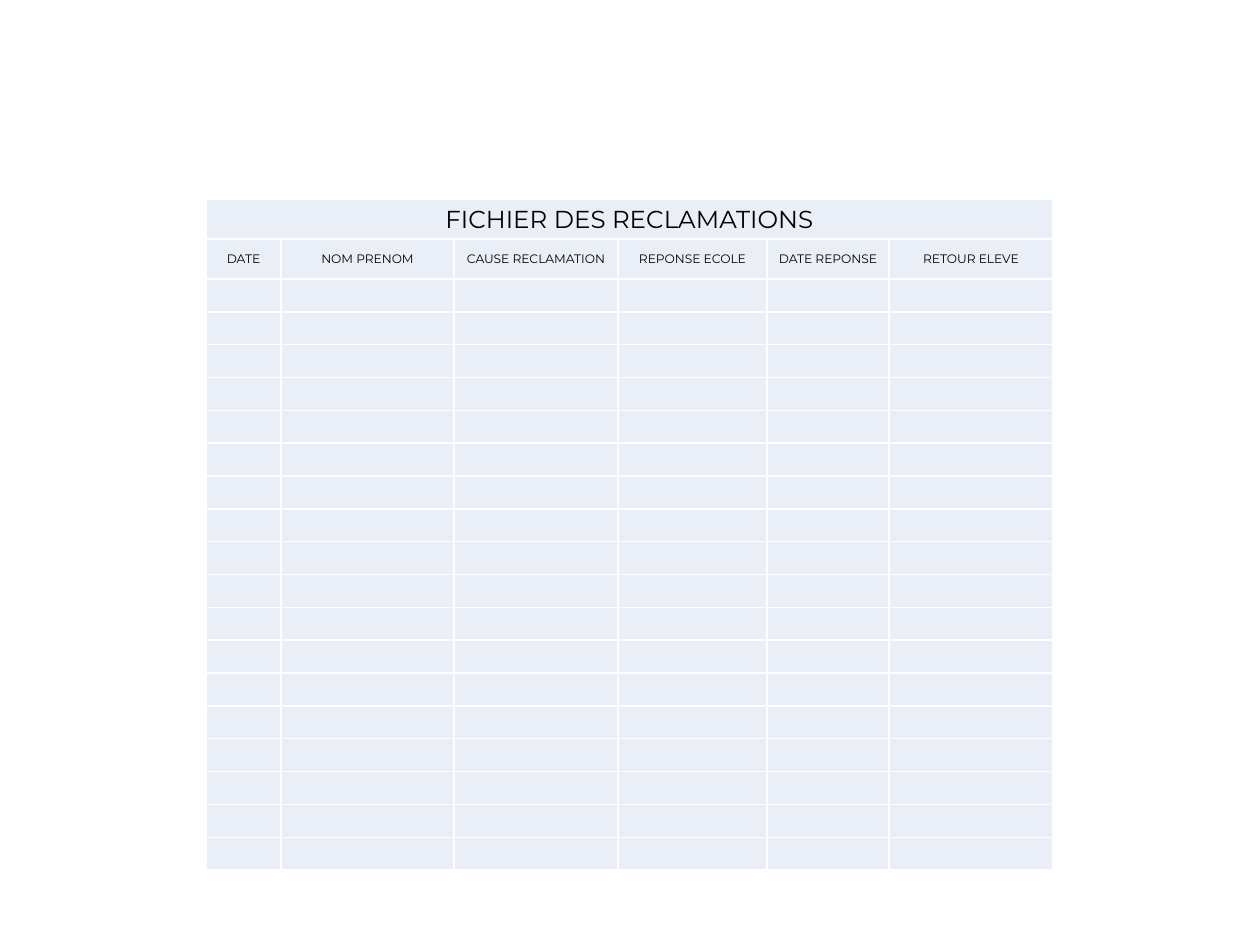
from lxml.etree import SubElement
from pptx import Presentation
from pptx.dml.color import RGBColor
from pptx.enum.text import MSO_ANCHOR, PP_ALIGN
from pptx.oxml.ns import qn
from pptx.util import Inches, Pt

SCALE = Inches(1) / 126
PALE_BLUE = RGBColor(0xEA, 0xEF, 0xF7)
WHITE = RGBColor(0xFF, 0xFF, 0xFF)
BLACK = RGBColor(0x00, 0x00, 0x00)

TITLE = "FICHIER DES RECLAMATIONS"
COLUMNS = [
    ("DATE", 75),
    ("NOM PRENOM", 173),
    ("CAUSE RECLAMATION", 164),
    ("REPONSE ECOLE", 149),
    ("DATE REPONSE", 122),
    ("RETOUR ELEVE", 164),
]
LEFT, TOP = 206, 199
HEAD_ROWS, HEAD_HEIGHT = 2, 40
BODY_ROWS, BODY_HEIGHT = 18, 592


def px(n):
    return round(n * SCALE)


def add_borders(cell):
    tc_pr = cell._tc.get_or_add_tcPr()
    for side in ("lnL", "lnR", "lnT", "lnB"):
        ln = SubElement(tc_pr, qn(f"a:{side}"), w=str(Pt(1)))
        fill = SubElement(ln, qn("a:solidFill"))
        SubElement(fill, qn("a:srgbClr"), val=str(WHITE))


prs = Presentation()
prs.slide_width, prs.slide_height = px(1260), px(945)
s = prs.slides.add_slide(prs.slide_layouts[6])

width = sum(w for _, w in COLUMNS)
height = HEAD_ROWS * HEAD_HEIGHT + BODY_HEIGHT
table = s.shapes.add_table(
    HEAD_ROWS + BODY_ROWS, len(COLUMNS), px(LEFT), px(TOP), px(width), px(height)
).table
table.first_row = False
table.horz_banding = False

for col, (_, w) in zip(table.columns, COLUMNS):
    col.width = px(w)
for i, row in enumerate(table.rows):
    row.height = px(HEAD_HEIGHT) if i < HEAD_ROWS else px(BODY_HEIGHT) // BODY_ROWS

cell_format = {
    "margin_left": px(1),
    "margin_right": px(1),
    "margin_top": px(1),
    "margin_bottom": 0,
    "vertical_anchor": MSO_ANCHOR.MIDDLE,
}
for cell in table.iter_cells():
    add_borders(cell)
    cell.fill.solid()
    cell.fill.fore_color.rgb = PALE_BLUE
    for name, value in cell_format.items():
        setattr(cell, name, value)

table.cell(0, 0).merge(table.cell(0, len(COLUMNS) - 1))
labels = [(table.cell(0, 0), TITLE, 14)]
labels += [(table.cell(1, i), text, 7) for i, (text, _) in enumerate(COLUMNS)]
for cell, text, size in labels:
    p = cell.text_frame.paragraphs[0]
    p.alignment = PP_ALIGN.CENTER
    r = p.add_run()
    r.text = text
    r.font.color.rgb = BLACK
    for name, value in {"name": "Montserrat", "size": Pt(size)}.items():
        setattr(r.font, name, value)

for row in list(table.rows)[HEAD_ROWS:]:
    for cell in row.cells:
        p = cell.text_frame.paragraphs[0]
        SubElement(p._p, qn("a:endParaRPr"), sz="700")

prs.save("out.pptx")
